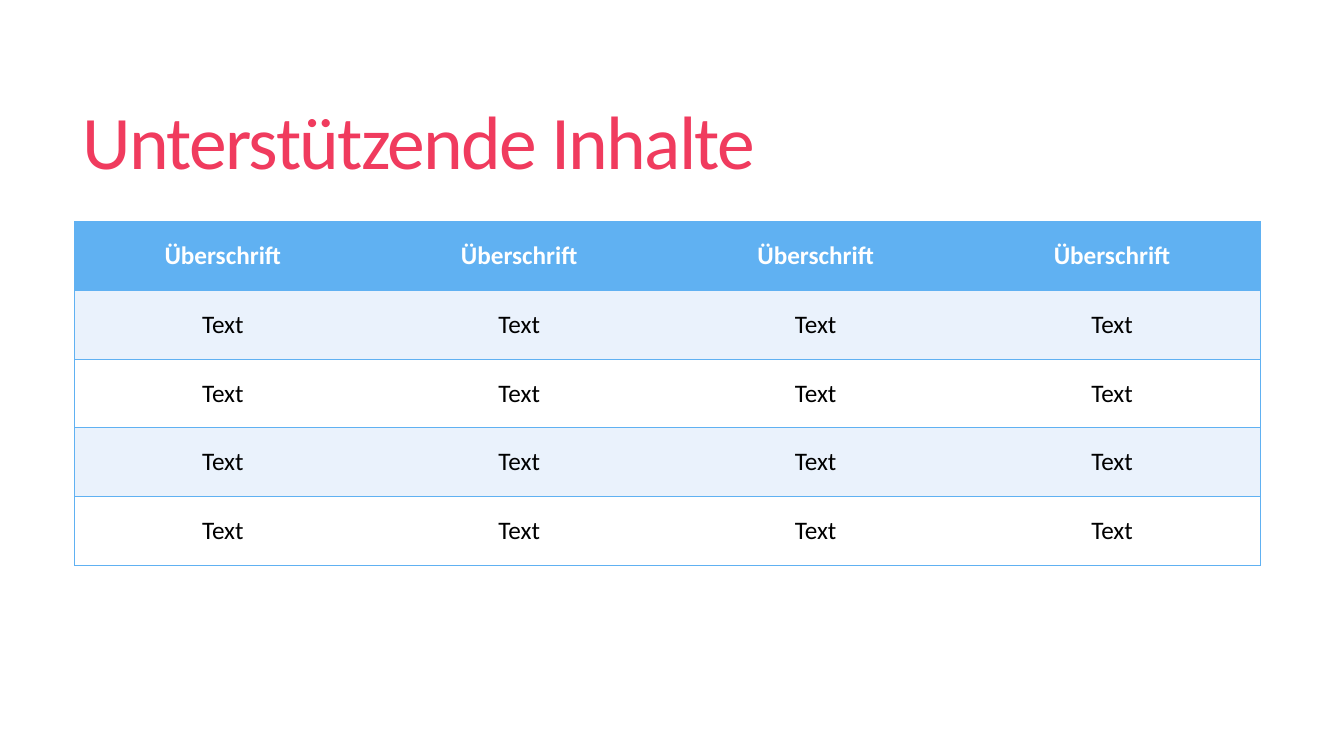
from lxml.etree import SubElement
from pptx import Presentation
from pptx.dml.color import RGBColor
from pptx.enum.text import MSO_ANCHOR as Anchor, MSO_AUTO_SIZE as AutoSize, PP_ALIGN as Align
from pptx.oxml.ns import qn
from pptx.util import Cm, Pt

PINK = RGBColor(0xF0, 0x3B, 0x5E)
BLUE = RGBColor(0x60, 0xB1, 0xF2)
PALE_BLUE = RGBColor(0xEA, 0xF2, 0xFC)
WHITE = RGBColor(0xFF, 0xFF, 0xFF)
BLACK = RGBColor(0, 0, 0)
FONT = "Calibri"

HEADER = ["Überschrift"] * 4
BODY = [["Text"] * 4] * 4


def set_border(cell, side, color):
    """Draw a 1 pt line on one side (L, R, T or B); a color of None hides it."""
    line = SubElement(cell._tc.get_or_add_tcPr(), qn(f"a:ln{side}"), w=str(Pt(1)))
    if color is None:
        SubElement(line, qn("a:noFill"))
    else:
        fill = SubElement(line, qn("a:solidFill"))
        SubElement(fill, qn("a:srgbClr"), val=str(color))


deck = Presentation()
deck.slide_width, deck.slide_height = Cm(33.87), Cm(19.05)
page = deck.slides.add_slide(deck.slide_layouts[5])

title = page.shapes.title
title.left, title.top, title.width, title.height = Cm(1.83), Cm(1.4), Cm(29.92), Cm(4.6)
frame = title.text_frame
frame.text = "Unterstützende Inhalte"
frame.word_wrap = True
frame.auto_size = AutoSize.NONE
frame.vertical_anchor = Anchor.MIDDLE
para = frame.paragraphs[0]
para.alignment = Align.LEFT
para.line_spacing = 0.85
para.font.name = FONT
para.font.size = Pt(54)
para.font.color.rgb = PINK
para.runs[0]._r.get_or_add_rPr().set("spc", "-120")

rows = [HEADER] + BODY
last_column = len(HEADER) - 1
table = page.shapes.add_table(
    len(rows), len(HEADER), Cm(1.88), Cm(5.59), Cm(29.88), Cm(8.65)
).table

for row_index, texts in enumerate(rows):
    table.rows[row_index].height = Cm(1.73)
    is_header = row_index == 0
    if is_header:
        fill_color = BLUE
    else:
        fill_color = PALE_BLUE if row_index % 2 else WHITE

    for column_index, text in enumerate(texts):
        cell = table.cell(row_index, column_index)
        set_border(cell, "L", BLUE if column_index == 0 else None)
        set_border(cell, "R", BLUE if column_index == last_column else None)
        set_border(cell, "T", BLUE)
        set_border(cell, "B", BLUE)
        cell.fill.solid()
        cell.fill.fore_color.rgb = fill_color
        cell.vertical_anchor = Anchor.MIDDLE
        cell.text = text
        para = cell.text_frame.paragraphs[0]
        para.alignment = Align.CENTER
        para.font.name = FONT
        para.font.size = Pt(18)
        para.font.bold = is_header
        para.font.color.rgb = WHITE if is_header else BLACK

deck.save("out.pptx")
